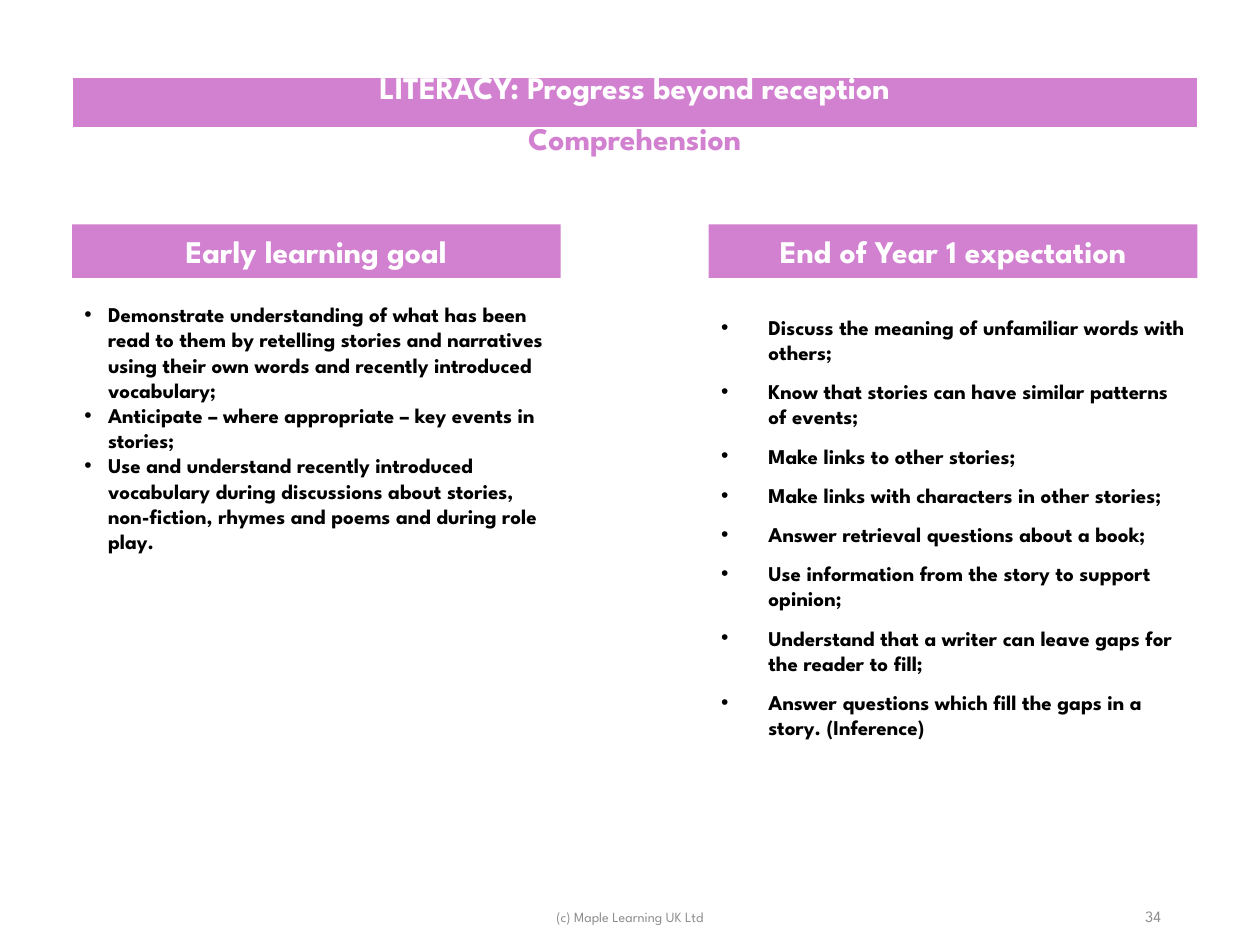
from lxml.etree import SubElement
from pptx import Presentation
from pptx.dml.color import RGBColor
from pptx.enum.shapes import MSO_SHAPE
from pptx.enum.text import MSO_ANCHOR, PP_ALIGN
from pptx.oxml.ns import qn
from pptx.util import Pt

FONT = "League Spartan"
PINK = RGBColor(0xD2, 0x80, 0xD0)
WHITE = RGBColor(0xFF, 0xFF, 0xFF)
BLACK = RGBColor(0, 0, 0)
GREY = RGBColor(0x8C, 0x8C, 0x8C)

TITLE = "LITERACY: Progress beyond reception"
TOPIC = "Comprehension"
COLUMNS = [
    {
        "head": "Early learning goal",
        "items": [
            "Demonstrate understanding of what has been read to them by retelling "
            "stories and narratives using their own words and recently introduced "
            "vocabulary;",
            "Anticipate – where appropriate – key events in stories;",
            "Use and understand recently introduced vocabulary during discussions "
            "about stories, non-fiction, rhymes and poems and during role play.",
        ],
        "height": 150.5, "indent": 13.5, "gap": 0, "inset": 3.6,
        "anchor": MSO_ANCHOR.MIDDLE,
    },
    {
        "head": "End of Year 1 expectation",
        "items": [
            "Discuss the meaning of unfamiliar words with others;",
            "Know that stories can have similar patterns of events;",
            "Make links to other stories;",
            "Make links with characters in other stories;",
            "Answer retrieval questions about a book;",
            "Use information from the story to support opinion;",
            "Understand that a writer can leave gaps for the reader to fill;",
            "Answer questions which fill the gaps in a story. (Inference)",
        ],
        "height": 281.5, "indent": 27, "gap": 8, "inset": 10.4,
        "anchor": MSO_ANCHOR.TOP,
    },
]
FOOTER = [
    ("(c) Maple Learning UK Ltd", (238.5, 509.8, 243, 28.8), 8, PP_ALIGN.CENTER),
    ("34", (508.5, 509, 162, 28.8), 9, PP_ALIGN.RIGHT),
]

LEFT, WIDTH = 41.2, 643
COL = 279.2
HEAD_TOP, HEAD_HIGH = 128.3, 30.6
LIST_TOP = 169.2
TABLE_TOP, ROW = 44, 29.2


def write(para, text, size, color, bold=True, align=PP_ALIGN.LEFT):
    para.alignment = align
    run = para.add_run()
    run.text = text
    look = {"name": FONT, "size": Pt(size), "bold": bold}
    for key, value in look.items():
        setattr(run.font, key, value)
    run.font.color.rgb = color


def bullet(para, indent):
    props = para._p.get_or_add_pPr()
    props.set("marL", str(Pt(indent)))
    props.set("indent", str(-Pt(indent)))
    SubElement(props, qn("a:buFont")).set("typeface", "Arial")
    SubElement(props, qn("a:buChar")).set("char", "•")


def add_box(slide, place, anchor=MSO_ANCHOR.MIDDLE):
    frame = slide.shapes.add_textbox(*map(Pt, place)).text_frame
    frame.word_wrap = True
    frame.vertical_anchor = anchor
    return frame


def add_title(slide):
    place = map(Pt, (LEFT, TABLE_TOP, WIDTH, 2 * ROW))
    table = slide.shapes.add_table(2, 1, *place).table
    table.horz_banding = False
    for row, (text, color) in enumerate([(TITLE, WHITE), (TOPIC, PINK)]):
        cell = table.cell(row, 0)
        cell.margin_top = cell.margin_bottom = 0
        write(cell.text_frame.paragraphs[0], text, 18, color, align=PP_ALIGN.CENTER)
    table.cell(0, 0).fill.solid()
    table.cell(0, 0).fill.fore_color.rgb = PINK
    table.cell(1, 0).fill.background()


def add_head(slide, text, left):
    place = map(Pt, (left, HEAD_TOP, COL, HEAD_HIGH))
    bar = slide.shapes.add_shape(MSO_SHAPE.RECTANGLE, *place)
    bar.shadow.inherit = False
    bar.fill.solid()
    bar.fill.fore_color.rgb = PINK
    bar.line.fill.background()
    bar.text_frame.vertical_anchor = MSO_ANCHOR.MIDDLE
    write(bar.text_frame.paragraphs[0], text, 18, WHITE, align=PP_ALIGN.CENTER)


def add_list(slide, col, left):
    frame = add_box(slide, (left, LIST_TOP, COL, col["height"]), col["anchor"])
    frame.margin_top = Pt(col["inset"])
    for pos, text in enumerate(col["items"]):
        para = frame.add_paragraph() if pos else frame.paragraphs[0]
        para.space_after = Pt(col["gap"])
        bullet(para, col["indent"])
        write(para, text, 12, BLACK)


def main():
    deck = Presentation()
    deck.slide_width, deck.slide_height = Pt(720), Pt(540)
    slide = deck.slides.add_slide(deck.slide_layouts[6])
    add_title(slide)
    for pos, col in enumerate(COLUMNS):
        left = LEFT + pos * (WIDTH - COL)
        add_list(slide, col, left)
        add_head(slide, col["head"], left)
    for text, place, size, align in FOOTER:
        para = add_box(slide, place).paragraphs[0]
        write(para, text, size, GREY, False, align)
    deck.save("out.pptx")


if __name__ == "__main__":
    main()
